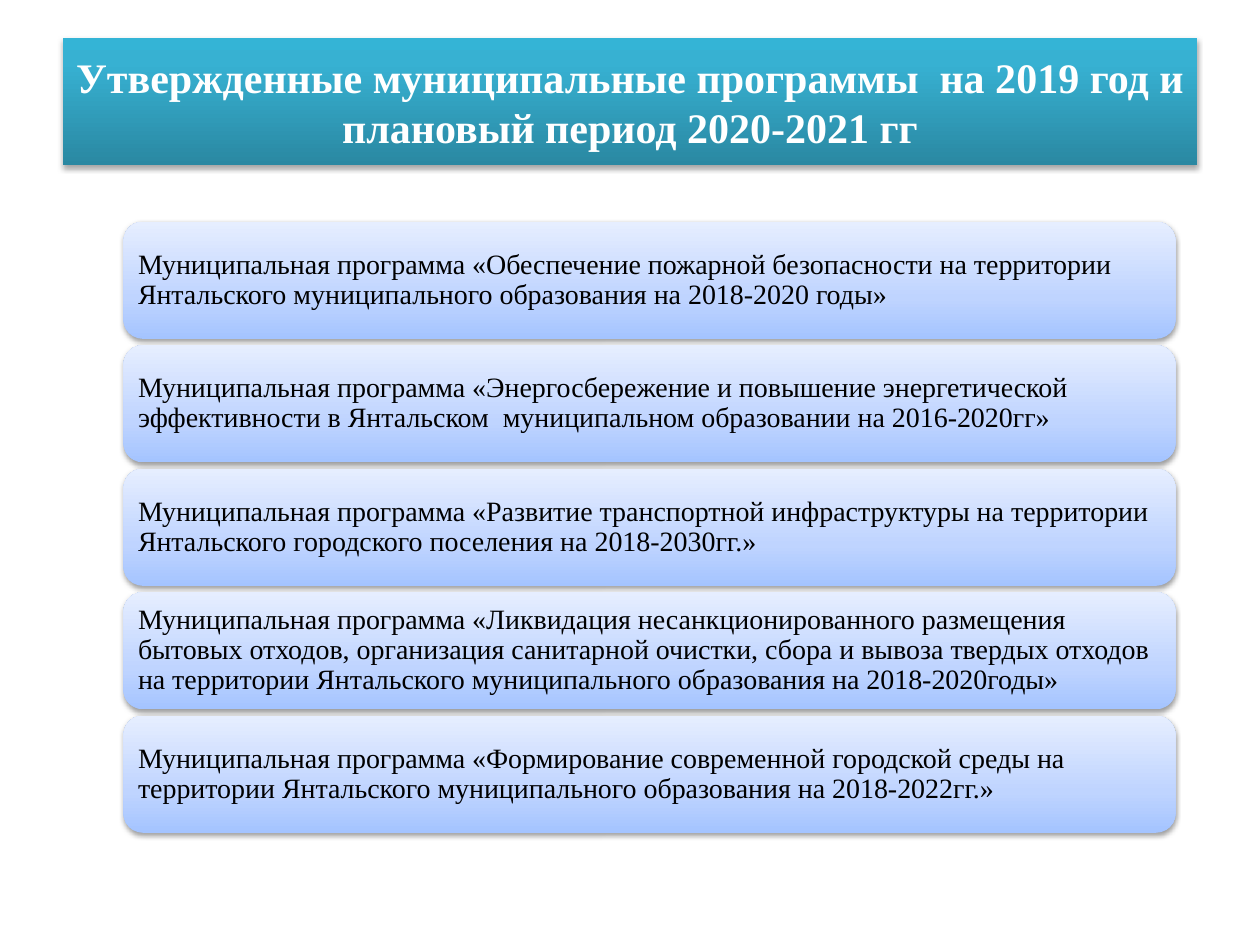
from lxml import etree
from pptx import Presentation
from pptx.dml.color import RGBColor
from pptx.enum.shapes import MSO_SHAPE
from pptx.enum.text import MSO_ANCHOR, MSO_AUTO_SIZE, PP_ALIGN
from pptx.oxml.ns import qn
from pptx.util import Inches, Pt

ROUND_RECT = MSO_SHAPE.ROUNDED_RECTANGLE
MIDDLE = MSO_ANCHOR.MIDDLE
NO_AUTOFIT = MSO_AUTO_SIZE.NONE
LEFT, CENTER = PP_ALIGN.LEFT, PP_ALIGN.CENTER

FONT = "Times New Roman"
TITLE = "Утвержденные муниципальные программы  на 2019 год и плановый период 2020-2021 гг"
TITLE_STOPS = [(0, "2A88A2"), (80, "37B1D2"), (100, "34B4D6")]
CARD_STOPS = [(0, "A4C4FF"), (35, "BFD4FF"), (100, "E6EEFF")]
PROGRAMS = [
    "«Обеспечение пожарной безопасности на территории Янтальского муниципального образования на 2018-2020 годы»",
    "«Энергосбережение и повышение энергетической эффективности в Янтальском  муниципальном образовании на 2016-2020гг»",
    "«Развитие транспортной инфраструктуры на территории Янтальского городского поселения на 2018-2030гг.»",
    "«Ликвидация несанкционированного размещения бытовых отходов, организация санитарной очистки, сбора и вывоза твердых отходов на территории Янтальского муниципального образования на 2018-2020годы»",
    "«Формирование современной городской среды на территории Янтальского муниципального образования на 2018-2022гг.»",
]
CARD_TOP, CARD_STEP = 1.76, 0.98


def rgb(value):
    return RGBColor.from_string(value)


def add_color(parent, color, **mods):
    clr = etree.SubElement(parent, qn("a:srgbClr"), val=str(rgb(color)))
    for name, val in mods.items():
        etree.SubElement(clr, qn(f"a:{name}"), val=str(val))


def set_gradient(sp, stops):
    sp.fill.gradient()
    sp.fill.gradient_angle = 90
    gs_lst = sp.element.spPr.find(".//" + qn("a:gsLst"))
    for gs in list(gs_lst):
        gs_lst.remove(gs)
    for pos, color in stops:
        gs = etree.SubElement(gs_lst, qn("a:gs"), pos=str(pos * 1000))
        add_color(gs, color)


def set_shadow(sp, alpha, dist):
    sp.shadow.inherit = False
    effects = sp.element.spPr.find(qn("a:effectLst"))
    shadow = etree.SubElement(
        effects, qn("a:outerShdw"), blurRad=str(Pt(3.1)), dist=str(Pt(dist)),
        dir="5400000", rotWithShape="0")
    add_color(shadow, "000000", alpha=alpha * 1000)


def set_text(sp, text, size, color, bold=False, align=LEFT, inset=0.1,
             inset_y=0.05, spacing=1.0, after=0):
    tf = sp.text_frame
    tf.word_wrap = True
    tf.auto_size = NO_AUTOFIT
    tf.vertical_anchor = MIDDLE
    tf.margin_left = tf.margin_right = Inches(inset)
    tf.margin_top = tf.margin_bottom = Inches(inset_y)
    p = tf.paragraphs[0]
    p.alignment = align
    p.line_spacing = spacing
    p.space_after = Pt(after)
    r = p.add_run()
    r.text = text
    r.font.name = FONT
    r.font.size = Pt(size)
    r.font.bold = bold
    r.font.color.rgb = rgb(color)


def format_title(sp):
    sp.left, sp.top = Inches(0.5), Inches(0.3)
    sp.width, sp.height = Inches(9), Inches(1.01)
    set_gradient(sp, TITLE_STOPS)
    sp.line.fill.background()
    set_shadow(sp, alpha=35, dist=1.8)
    set_text(sp, TITLE, 24, "FFFFFF", bold=True, align=CENTER)


def add_card(s, top, text):
    sp = s.shapes.add_shape(ROUND_RECT, Inches(0.98), Inches(top),
                            Inches(8.35), Inches(0.93))
    set_gradient(sp, CARD_STOPS)
    sp.line.fill.background()
    set_shadow(sp, alpha=38, dist=1.6)
    set_text(sp, text, 16, "000000", inset=0.07, inset_y=0.07,
             spacing=0.9, after=5.6)


def main():
    prs = Presentation()
    prs.slide_width, prs.slide_height = Inches(10), Inches(7.5)
    s = prs.slides.add_slide(prs.slide_layouts[5])
    format_title(s.shapes.title)
    for i, program in enumerate(PROGRAMS):
        add_card(s, CARD_TOP + i * CARD_STEP, f"Муниципальная программа {program}")
    prs.save("out.pptx")


if __name__ == "__main__":
    main()
